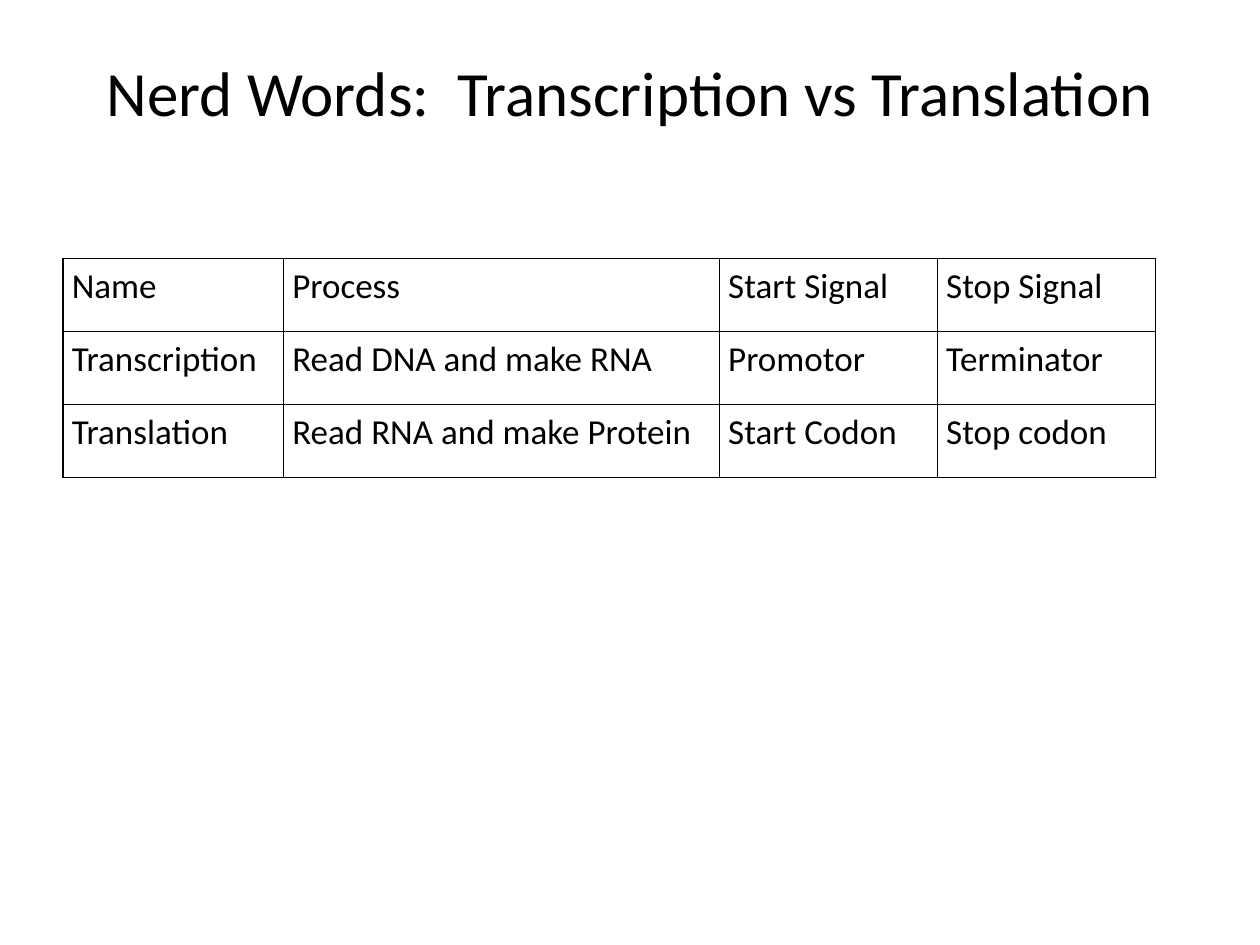
from lxml.etree import SubElement
from pptx import Presentation
from pptx.dml.color import RGBColor
from pptx.enum.text import MSO_ANCHOR, PP_ALIGN
from pptx.oxml.ns import qn
from pptx.util import Inches, Pt

COLORS = {"text": "000000", "line": "000000", "back": "FFFFFF"}
FONT = "Calibri"
WIDTHS = [1.75, 3.46, 1.73, 1.73]
HEIGHT = 0.58
ROWS = [
    ["Name", "Process", "Start Signal", "Stop Signal"],
    ["Transcription", "Read DNA and make RNA", "Promotor", "Terminator"],
    ["Translation", "Read RNA and make Protein", "Start Codon", "Stop codon"],
]


def style(par, size):
    for run in par.runs:
        run.font.name = FONT
        run.font.size = Pt(size)
        run.font.color.rgb = RGBColor.from_string(COLORS["text"])


def add_title(slide, text):
    box = slide.shapes.add_textbox(Inches(0.5), Inches(0.1), Inches(9), Inches(1.25))
    frame = box.text_frame
    frame.word_wrap = True
    frame.vertical_anchor = MSO_ANCHOR.MIDDLE
    frame.text = text
    par = frame.paragraphs[0]
    par.alignment = PP_ALIGN.CENTER
    style(par, 36)


def add_border(cell):
    props = cell._tc.get_or_add_tcPr()
    for side in ("lnL", "lnR", "lnT", "lnB"):
        line = SubElement(props, qn(f"a:{side}"), w=str(Pt(1)))
        fill = SubElement(line, qn("a:solidFill"))
        SubElement(fill, qn("a:srgbClr"), val=COLORS["line"])


def fill_cell(cell, text):
    cell.margin_left = cell.margin_right = Inches(0.07)
    cell.margin_top = cell.margin_bottom = 0
    cell.text_frame.text = text
    par = cell.text_frame.paragraphs[0]
    par.line_spacing = 1.15
    style(par, 20)
    add_border(cell)
    cell.fill.background()


def add_grid(slide, rows):
    frame = slide.shapes.add_table(
        len(rows), len(WIDTHS), Inches(0.5), Inches(2.05),
        Inches(sum(WIDTHS)), Inches(HEIGHT * len(rows)),
    )
    table = frame.table
    table.first_row = table.horz_banding = False
    for col, width in zip(table.columns, WIDTHS):
        col.width = Inches(width)
    for row, texts in zip(table.rows, rows):
        row.height = Inches(HEIGHT)
        for cell, text in zip(row.cells, texts):
            fill_cell(cell, text)


def main():
    deck = Presentation()
    deck.slide_width = Inches(10)
    deck.slide_height = Inches(7.5)
    slide = deck.slides.add_slide(deck.slide_layouts[6])
    back = slide.background.fill
    back.solid()
    back.fore_color.rgb = RGBColor.from_string(COLORS["back"])
    add_title(slide, "Nerd Words:  Transcription vs Translation")
    add_grid(slide, ROWS)
    deck.save("out.pptx")


if __name__ == "__main__":
    main()
